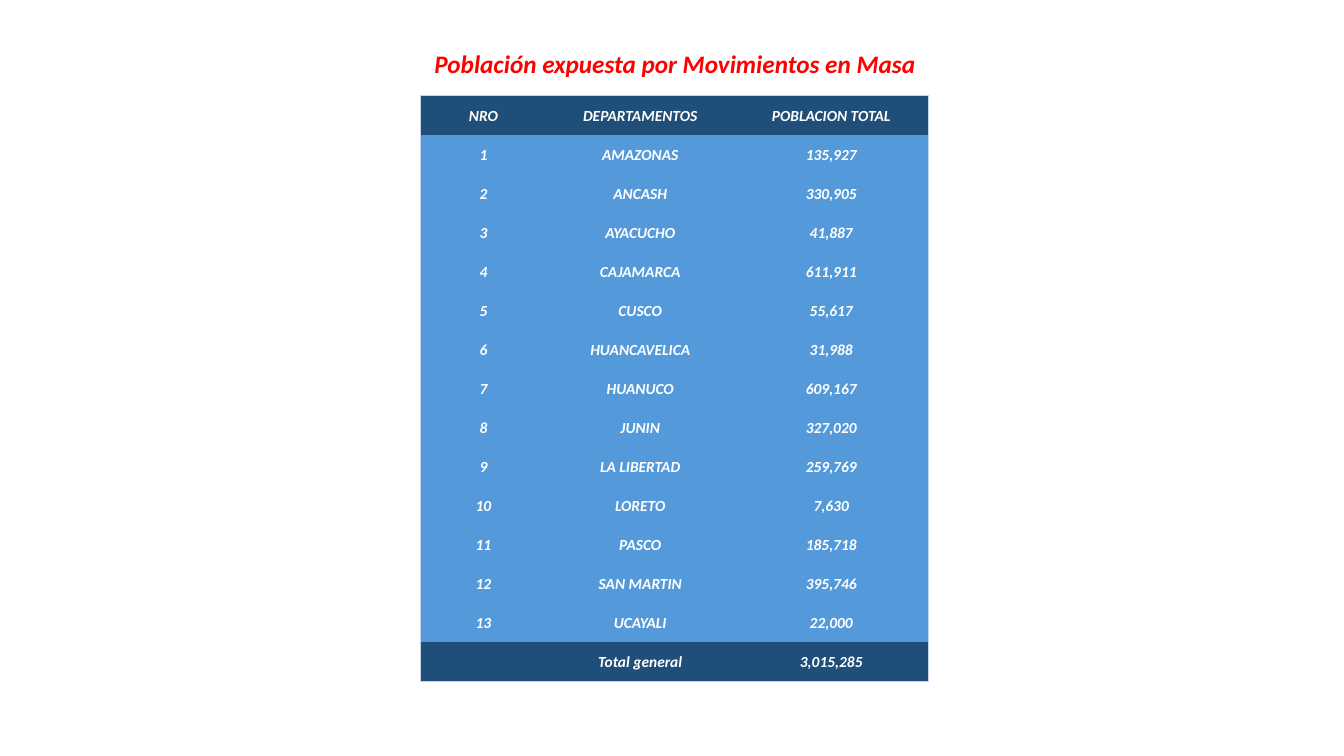
from dataclasses import dataclass

from lxml import etree
from pptx import Presentation
from pptx.dml.color import RGBColor
from pptx.enum.text import MSO_ANCHOR, PP_ALIGN
from pptx.oxml.ns import qn
from pptx.util import Inches, Pt

CENTER = PP_ALIGN.CENTER
MIDDLE = MSO_ANCHOR.MIDDLE


@dataclass(frozen=True)
class Theme:
    font: str = "Calibri"
    title_size: float = 18
    cell_size: float = 11
    border_width: float = 0.5
    title: str = "FF0000"
    text: str = "FFFFFF"
    band: str = "1F4E79"
    body: str = "5499DA"
    border: str = "C4D5EB"


THEME = Theme()

TITLE = "Población expuesta por Movimientos en Masa"
HEADER = ("NRO", "DEPARTAMENTOS", "POBLACION TOTAL")
POPULATION = {
    "AMAZONAS": 135927,
    "ANCASH": 330905,
    "AYACUCHO": 41887,
    "CAJAMARCA": 611911,
    "CUSCO": 55617,
    "HUANCAVELICA": 31988,
    "HUANUCO": 609167,
    "JUNIN": 327020,
    "LA LIBERTAD": 259769,
    "LORETO": 7630,
    "PASCO": 185718,
    "SAN MARTIN": 395746,
    "UCAYALI": 22000,
}
COLUMN_WIDTHS = (1.25, 1.86, 1.93)


def add_span(para, text, size, color):
    """Add one centred bold italic run."""
    para.alignment = CENTER
    span = para.add_run()
    span.text = text
    span.font.name = THEME.font
    span.font.size = Pt(size)
    span.font.bold = True
    span.font.italic = True
    span.font.color.rgb = RGBColor.from_string(color)


def set_borders(cell, outer_edges):
    """Line the outer edges and leave the inner ones blank."""
    properties = cell._tc.get_or_add_tcPr()
    for position, edge in enumerate("LRTB"):
        line = etree.Element(qn(f"a:ln{edge}"))
        if edge in outer_edges:
            line.set("w", str(Pt(THEME.border_width)))
            fill = etree.SubElement(line, qn("a:solidFill"))
            etree.SubElement(fill, qn("a:srgbClr"), val=THEME.border)
        else:
            etree.SubElement(line, qn("a:noFill"))
        properties.insert(position, line)


def add_title(page, left, top, width, height):
    box = page.shapes.add_textbox(
        Inches(left), Inches(top), Inches(width), Inches(height))
    box.text_frame.word_wrap = False
    add_span(box.text_frame.paragraphs[0], TITLE, THEME.title_size, THEME.title)


def fill_cell(cell, text, color):
    cell.margin_left = cell.margin_right = cell.margin_top = Inches(0.01)
    cell.margin_bottom = 0
    cell.vertical_anchor = MIDDLE
    cell.fill.solid()
    cell.fill.fore_color.rgb = RGBColor.from_string(color)
    if text:
        add_span(cell.text_frame.paragraphs[0], text,
                 THEME.cell_size, THEME.text)


def add_population_table(page, left, top, width, height):
    # Header, numbered departments and grand total
    rows = [HEADER]
    for number, (department, people) in enumerate(POPULATION.items(), 1):
        rows.append((str(number), department, f"{people:,}"))
    rows.append(("", "Total general", f"{sum(POPULATION.values()):,}"))
    last_row, last_column = len(rows) - 1, len(HEADER) - 1

    table = page.shapes.add_table(
        len(rows), len(HEADER),
        Inches(left), Inches(top), Inches(width), Inches(height)).table
    table.first_row = table.horz_banding = False
    for column, share in zip(table.columns, COLUMN_WIDTHS):
        column.width = Inches(width * share / sum(COLUMN_WIDTHS))

    for r, texts in enumerate(rows):
        color = THEME.band if r in (0, last_row) else THEME.body
        for c, text in enumerate(texts):
            cell = table.cell(r, c)
            fill_cell(cell, text, color)
            sides = {"L": c == 0, "R": c == last_column,
                     "T": r == 0, "B": r == last_row}
            set_borders(cell, [edge for edge, outer in sides.items() if outer])


def main():
    deck = Presentation()
    deck.slide_width = Inches(13.33)
    deck.slide_height = Inches(7.5)
    page = deck.slides.add_slide(deck.slide_layouts[6])
    add_title(page, 4.18, 0.43, 5.03, 0.4)
    add_population_table(page, 4.17, 0.95, 5.04, 5.81)
    deck.save("out.pptx")


if __name__ == "__main__":
    main()
